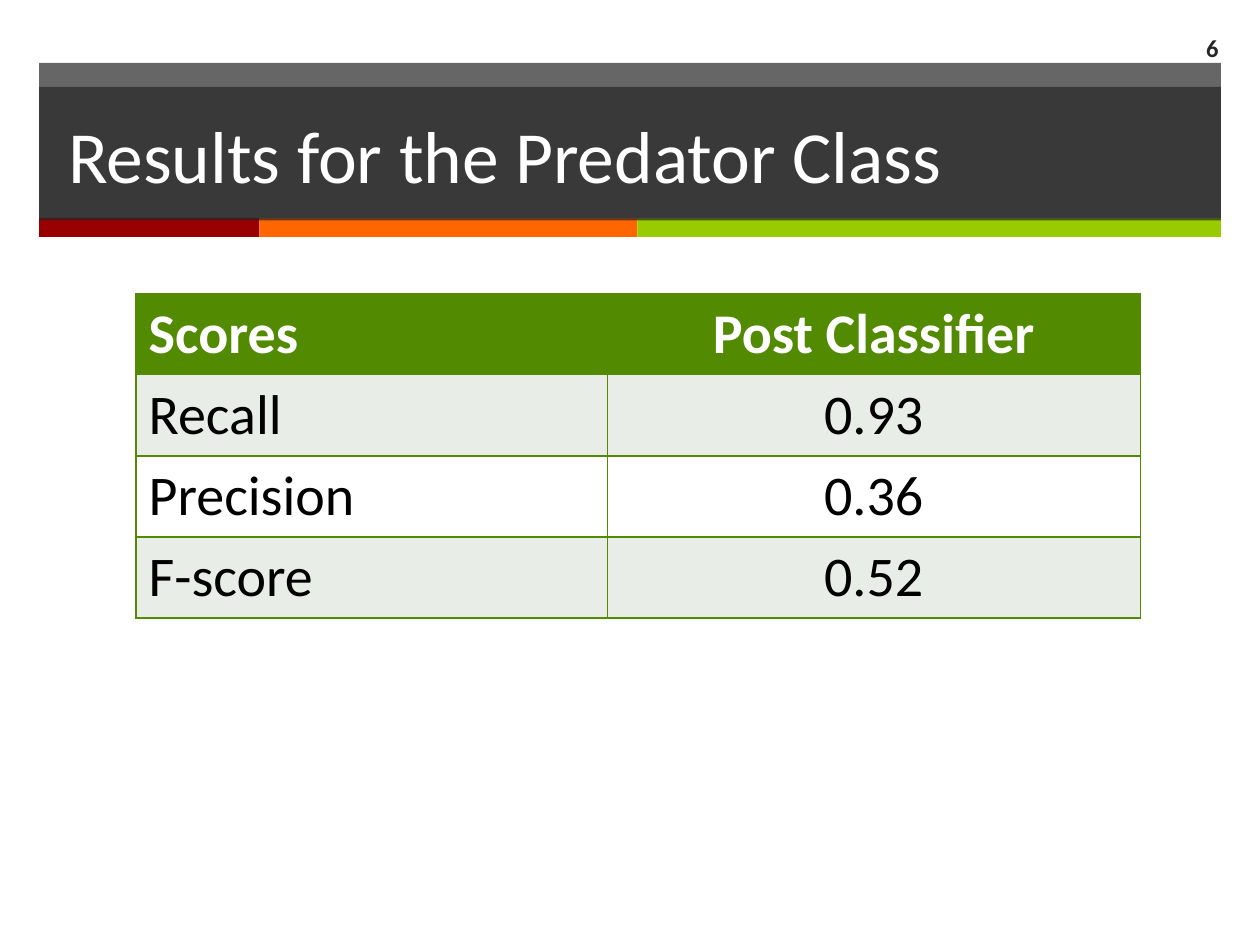
from lxml import etree
from pptx import Presentation
from pptx import util as u
from pptx.dml.color import RGBColor
from pptx.enum import shapes, text
from pptx.oxml.ns import qn

COLORS = {
    "dark": "262626",
    "red": "990000",
    "orange": "FF6600",
    "lime": "99CC00",
    "green": "528A02",
    "pale": "E9EDE7",
    "white": "FFFFFF",
    "black": "000000",
}
FONT = "Calibri"
BAND_LEFT, BAND_WIDTH = 0.31, 9.38
STRIPES = [("red", 1.75), ("orange", 3), ("lime", 4.63)]
SCORES = [
    ("Scores", "Post Classifier"),
    ("Recall", "0.93"),
    ("Precision", "0.36"),
    ("F-score", "0.52"),
]
COLUMN_WIDTHS = [3.74, 4.23]
ROW_HEIGHT = 0.64


def rgb(name):
    """Return the named palette colour."""
    return RGBColor.from_string(COLORS[name])


def write(frame, words, size, color, align, bold=False):
    """Write one styled paragraph into a text frame."""
    para = frame.paragraphs[0]
    para.text = words
    para.alignment = align
    para.font.name = FONT
    para.font.size = u.Pt(size)
    para.font.bold = bold
    para.font.color.rgb = rgb(color)


def add_bar(page, left, top, width, height, color, opacity=100):
    """Add a borderless rectangle, optionally translucent."""
    bar = page.shapes.add_shape(
        shapes.MSO_SHAPE.RECTANGLE,
        u.Inches(left), u.Inches(top), u.Inches(width), u.Inches(height))
    bar.shadow.inherit = False
    bar.line.fill.background()
    bar.fill.solid()
    bar.fill.fore_color.rgb = rgb(color)
    if opacity < 100:
        tint = bar.fill._xPr.find(qn("a:solidFill"))[0]
        etree.SubElement(tint, qn("a:alpha"), val=str(opacity * 1000))
    return bar


def add_header(page, title):
    """Add the dark bands, the coloured stripes and the title."""
    add_bar(page, BAND_LEFT, 0.5, BAND_WIDTH, 1.24, "dark", 70)
    left = BAND_LEFT
    for color, width in STRIPES:
        add_bar(page, left, 1.73, width, 0.15, color)
        left += width
    band = add_bar(page, BAND_LEFT, 0.69, BAND_WIDTH, 1.06, "dark", 70)
    frame = band.text_frame
    frame.margin_left = u.Inches(0.23)
    frame.vertical_anchor = text.MSO_ANCHOR.MIDDLE
    write(frame, title, 42, "white", text.PP_ALIGN.LEFT)


def add_page_number(page, number):
    """Add the page number at the top right."""
    box = page.shapes.add_textbox(
        u.Inches(9.08), u.Inches(0.18), u.Inches(0.69), u.Inches(0.39))
    frame = box.text_frame
    frame.word_wrap = True
    frame.vertical_anchor = text.MSO_ANCHOR.MIDDLE
    write(frame, number, 14, "dark", text.PP_ALIGN.RIGHT, bold=True)


def set_borders(cell, color):
    """Draw a one-point line on every side of a cell."""
    props = cell._tc.get_or_add_tcPr()
    for index, side in enumerate(("lnL", "lnR", "lnT", "lnB")):
        line = etree.Element(qn(f"a:{side}"), w=str(u.Pt(1)))
        fill = etree.SubElement(line, qn("a:solidFill"))
        etree.SubElement(fill, qn("a:srgbClr"), val=COLORS[color])
        props.insert(index, line)


def add_score_table(page):
    """Add the score table with a green header and banded rows."""
    table = page.shapes.add_table(
        len(SCORES), len(COLUMN_WIDTHS), u.Inches(1.08), u.Inches(2.33),
        u.Inches(sum(COLUMN_WIDTHS)), u.Inches(ROW_HEIGHT * len(SCORES))).table
    for column, width in zip(table.columns, COLUMN_WIDTHS):
        column.width = u.Inches(width)
    aligns = (text.PP_ALIGN.LEFT, text.PP_ALIGN.CENTER)
    for r, row in enumerate(SCORES):
        header = r == 0
        shade = "green" if header else "pale" if r % 2 else "white"
        for c, words in enumerate(row):
            cell = table.cell(r, c)
            cell.fill.solid()
            cell.fill.fore_color.rgb = rgb(shade)
            set_borders(cell, "green")
            write(cell.text_frame, words, 32,
                  "white" if header else "black", aligns[c], header)


def main():
    """Build the results slide and save the deck."""
    deck = Presentation()
    deck.slide_width, deck.slide_height = u.Inches(10), u.Inches(7.5)
    page = deck.slides.add_slide(deck.slide_layouts[6])
    add_header(page, "Results for the Predator Class")
    add_score_table(page)
    add_page_number(page, "6")
    deck.save("out.pptx")


if __name__ == "__main__":
    main()
